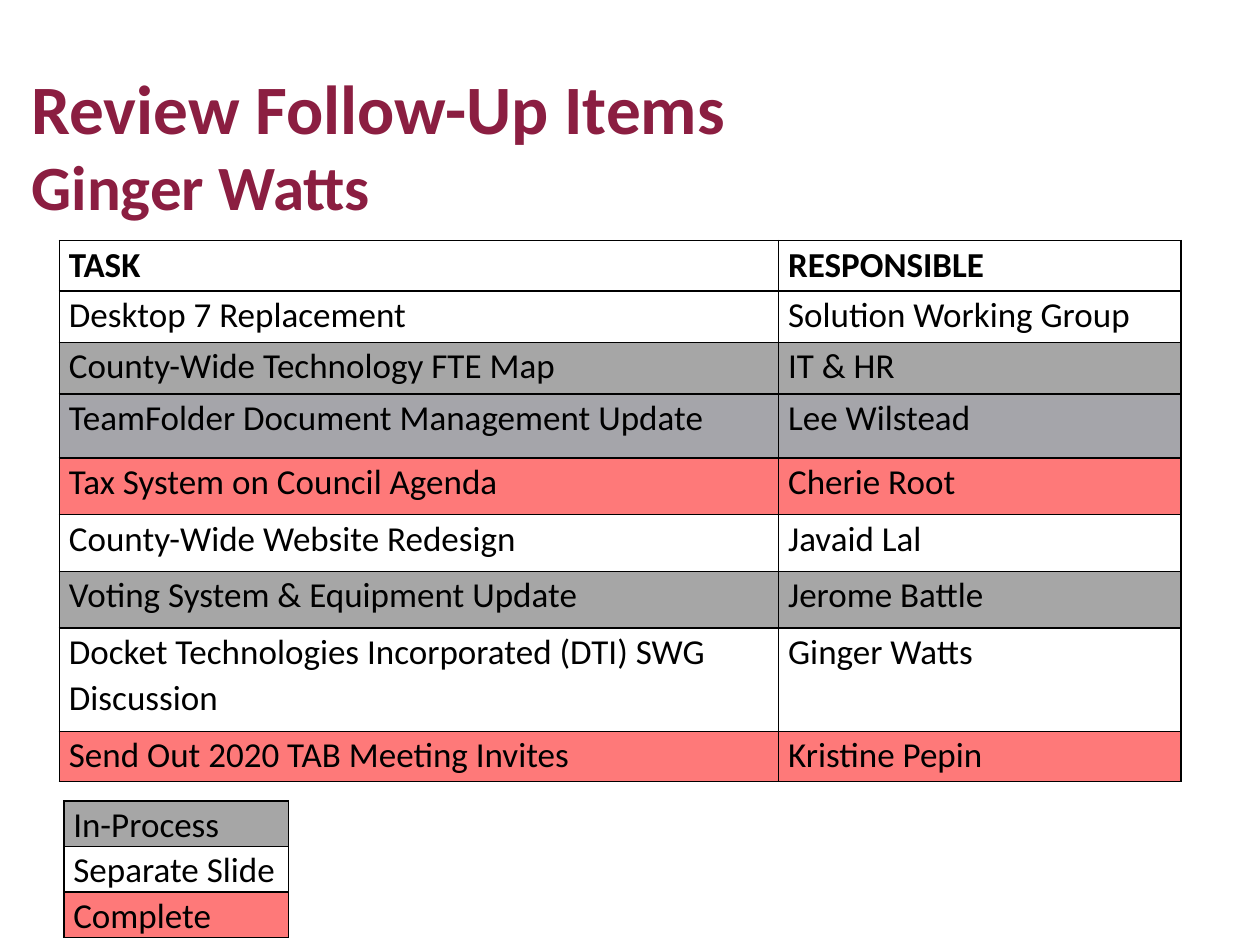
from lxml import etree
from pptx import Presentation
from pptx.dml.color import RGBColor
from pptx.enum.text import MSO_ANCHOR
from pptx.oxml.ns import qn
from pptx.util import Pt

TOP = MSO_ANCHOR.TOP
FONT = "Calibri"
MAROON = RGBColor(0x8B, 0x1E, 0x41)
BLACK = RGBColor(0x00, 0x00, 0x00)
WHITE = RGBColor(0xFF, 0xFF, 0xFF)
GRAY = RGBColor(0xA6, 0xA6, 0xA6)
COOL_GRAY = RGBColor(0xA5, 0xA5, 0xAA)
RED = RGBColor(0xFE, 0x79, 0x79)

TASKS = [
    (28.8, WHITE, ("TASK", "RESPONSIBLE")),
    (29.4, WHITE, ("Desktop 7 Replacement", "Solution Working Group")),
    (29.4, GRAY, ("County-Wide Technology FTE Map", "IT & HR")),
    (36.6, COOL_GRAY, ("TeamFolder Document Management Update", "Lee Wilstead")),
    (32.4, RED, ("Tax System on Council Agenda", "Cherie Root")),
    (32.4, WHITE, ("County-Wide Website Redesign", "Javaid Lal")),
    (32.4, GRAY, ("Voting System & Equipment Update", "Jerome Battle")),
    (59, WHITE, ("Docket Technologies Incorporated (DTI) SWG Discussion", "Ginger Watts")),
    (28.8, RED, ("Send Out 2020 TAB Meeting Invites", "Kristine Pepin")),
]
LEGEND = [
    (26, GRAY, ("In-Process",)),
    (26, WHITE, ("Separate Slide",)),
    (26, RED, ("Complete",)),
]


def add_run(paragraph, text, size, color, bold):
    """Append one formatted run to a paragraph."""
    run = paragraph.add_run()
    run.text = text
    run.font.name = FONT
    run.font.size = Pt(size)
    run.font.bold = bold
    run.font.color.rgb = color


def add_borders(cell):
    """Draw a thin black line on all four sides of a cell."""
    properties = cell._tc.get_or_add_tcPr()
    for index, side in enumerate(("a:lnL", "a:lnR", "a:lnT", "a:lnB")):
        line = etree.Element(qn(side), w=str(Pt(1)))
        fill = etree.SubElement(line, qn("a:solidFill"))
        etree.SubElement(fill, qn("a:srgbClr"), val=str(BLACK))
        properties.insert(index, line)


def add_title(slide, left, top, width, height):
    """Place the heading and the presenter's name below it."""
    frame = slide.shapes.add_textbox(Pt(left), Pt(top), Pt(width), Pt(height)).text_frame
    frame.word_wrap = True
    frame.vertical_anchor = TOP
    frame.margin_left = frame.margin_right = frame.margin_top = frame.margin_bottom = 0
    paragraph = frame.paragraphs[0]
    add_run(paragraph, "Review Follow-Up Items", 39.6, MAROON, True)
    paragraph.add_line_break()
    add_run(paragraph, "Ginger Watts", 36, MAROON, True)


def add_status_table(slide, left, top, widths, rows, has_header):
    """Place a bordered table whose row colors show status."""
    height = sum(row[0] for row in rows)
    table = slide.shapes.add_table(
        len(rows), len(widths), Pt(left), Pt(top), Pt(sum(widths)), Pt(height)
    ).table
    table.first_row = has_header
    table.horz_banding = False
    for column, width in zip(table.columns, widths):
        column.width = Pt(width)
    for index, (row_height, color, texts) in enumerate(rows):
        table.rows[index].height = Pt(row_height)
        for cell, text in zip(table.rows[index].cells, texts):
            cell.margin_left = cell.margin_right = Pt(5.4)
            cell.margin_top = cell.margin_bottom = 0
            cell.vertical_anchor = TOP
            cell.fill.solid()
            cell.fill.fore_color.rgb = color
            add_borders(cell)
            paragraph = cell.text_frame.paragraphs[0]
            paragraph.line_spacing = 1.07
            add_run(paragraph, text, 20, BLACK, has_header and index == 0)


def main():
    """Build the follow-up slide and save it."""
    presentation = Presentation()
    presentation.slide_width = Pt(720)
    presentation.slide_height = Pt(540)
    slide = presentation.slides.add_slide(presentation.slide_layouts[6])
    add_title(slide, 18, 37, 648, 54)
    add_status_table(slide, 34, 137.5, (411, 230), TASKS, True)
    add_status_table(slide, 36.5, 457.7, (128.4,), LEGEND, False)
    presentation.save("out.pptx")


if __name__ == "__main__":
    main()
